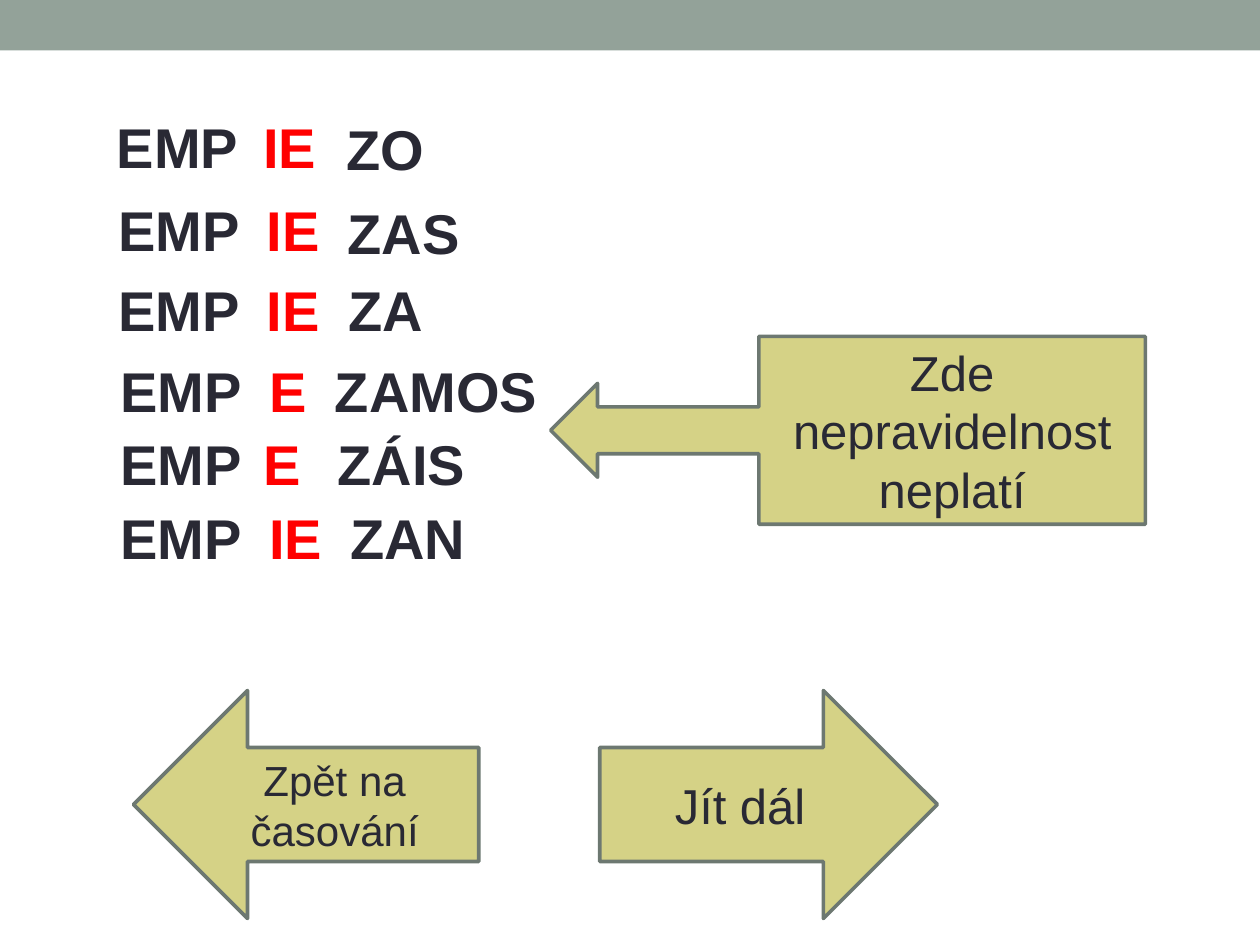
from pptx import Presentation
from pptx.dml.color import RGBColor
from pptx.enum.shapes import MSO_SHAPE as Preset
from pptx.enum.text import MSO_ANCHOR as Anchor, MSO_AUTO_SIZE as AutoSize, PP_ALIGN as Align
from pptx.util import Inches, Pt

INK = RGBColor(0x29, 0x29, 0x34)
RED = RGBColor(0xFF, 0x00, 0x00)
SAGE = RGBColor(0x93, 0xA2, 0x99)
OLIVE = RGBColor(0xD5, 0xD2, 0x86)
OUTLINE = RGBColor(0x6D, 0x78, 0x71)


def write(frame, text, size=28, color=INK, bold=False, align=Align.LEFT):
    paragraph = frame.paragraphs[0]
    paragraph.alignment = align
    run = paragraph.add_run()
    run.text = text
    run.font.name = "Arial"
    run.font.size = Pt(size)
    run.font.bold = bold
    run.font.color.rgb = color


def add_block(preset, left, top, width, height, fill):
    """Add a flat filled shape without outline; lengths in inches."""
    block = slide.shapes.add_shape(
        preset, Inches(left), Inches(top), Inches(width), Inches(height))
    block.shadow.inherit = False
    block.fill.solid()
    block.fill.fore_color.rgb = fill
    block.line.fill.background()
    return block


deck = Presentation()
deck.slide_width, deck.slide_height = Inches(10), Inches(7.5)
slide = deck.slides.add_slide(deck.slide_layouts[6])

add_block(Preset.RECTANGLE, 0, 0, 10, 0.4, SAGE)

# Each verb form: row top, then (text, left, width) of prefix, stem vowel, ending
ROW_HEIGHT = 0.64
conjugation = [
    (0.84, ("EMP", 0.83, 1.17), ("IE", 1.99, 0.63), ("ZO", 2.65, 0.82)),
    (1.50, ("EMP", 0.84, 1.17), ("IE", 2.02, 0.63), ("ZAS", 2.66, 1.10)),
    (2.14, ("EMP", 0.84, 1.17), ("IE", 2.02, 0.63), ("ZA", 2.67, 0.80)),
    (2.78, ("EMP", 0.86, 1.17), ("E", 2.04, 0.50), ("ZAMOS", 2.56, 1.82)),
    (3.36, ("EMP", 0.86, 1.17), ("E", 1.99, 0.50), ("ZÁIS", 2.58, 1.22)),
    (3.95, ("EMP", 0.86, 1.17), ("IE", 2.04, 0.63), ("ZAN", 2.68, 1.12)),
]
ending_drop = {"ZO": 0.02, "ZAS": 0.03}

for row_top, *parts in conjugation:
    for (part, left, width), color in zip(parts, (INK, RED, INK)):
        top = row_top + ending_drop.get(part, 0)
        frame = slide.shapes.add_textbox(
            Inches(left), Inches(top), Inches(width), Inches(ROW_HEIGHT)).text_frame
        frame.word_wrap = False
        frame.auto_size = AutoSize.SHAPE_TO_FIT_TEXT
        write(frame, part, size=32, color=color, bold=True)

ARROW_TOP, ARROW_HEIGHT = 5.48, 1.81
arrows = [
    (Preset.LEFT_ARROW_CALLOUT, 4.37, 2.67, 4.72, 1.49, "Zde nepravidelnost neplatí", 28),
    (Preset.LEFT_ARROW, 1.06, ARROW_TOP, 2.74, ARROW_HEIGHT, "Zpět na časování", 24),
    (Preset.RIGHT_ARROW, 4.76, ARROW_TOP, 2.68, ARROW_HEIGHT, "Jít dál", 28),
]
for preset, left, top, width, height, message, size in arrows:
    arrow = add_block(preset, left, top, width, height, OLIVE)
    arrow.line.color.rgb = OUTLINE
    arrow.line.width = Pt(2.08)
    arrow.text_frame.word_wrap = True
    arrow.text_frame.vertical_anchor = Anchor.MIDDLE
    write(arrow.text_frame, message, size=size, align=Align.CENTER)

deck.save("out.pptx")
